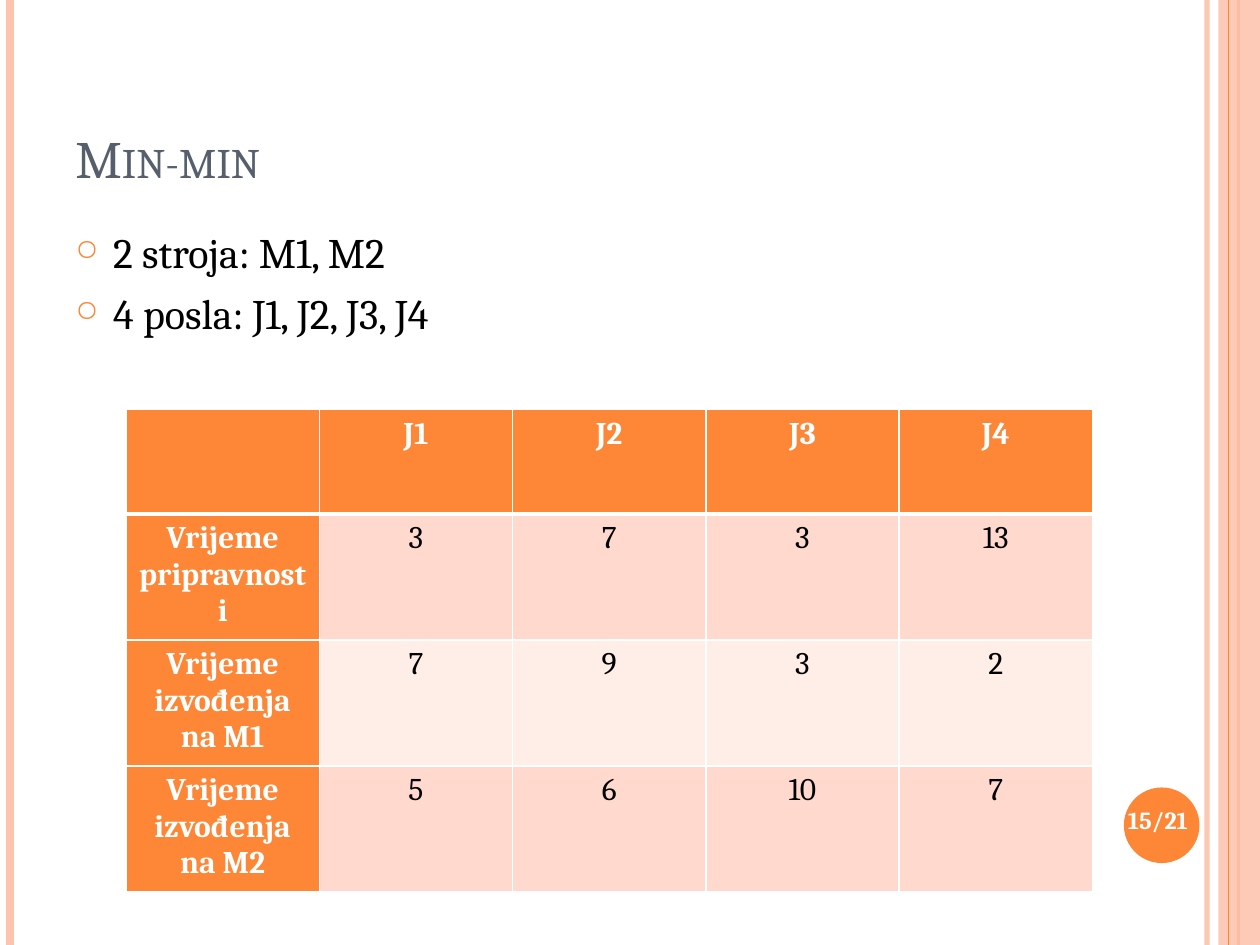
from dataclasses import dataclass

from lxml import etree
from pptx import Presentation
from pptx.dml.color import RGBColor
from pptx.enum.shapes import MSO_CONNECTOR, MSO_SHAPE
from pptx.enum.text import MSO_ANCHOR, PP_ALIGN
from pptx.oxml.ns import qn
from pptx.util import Inches, Pt

STRAIGHT = MSO_CONNECTOR.STRAIGHT
RECTANGLE, OVAL = MSO_SHAPE.RECTANGLE, MSO_SHAPE.OVAL
TOP, MIDDLE, BOTTOM = MSO_ANCHOR.TOP, MSO_ANCHOR.MIDDLE, MSO_ANCHOR.BOTTOM
CENTER = PP_ALIGN.CENTER
FONT = "Cambria"
WIDTH, HEIGHT = 10, 7.5
COLORS = {
    "accent": "FE8637",
    "peach": "FEC3AE",
    "title": "575F6D",
    "text": "000000",
    "white": "FFFFFF",
    "odd_row": "FFD9CE",
    "even_row": "FFEDE8",
}


@dataclass
class Stripe:
    x: float
    color: str
    weight: float
    alpha: int = 100


@dataclass
class Box:
    left: float
    top: float
    width: float
    height: float


BACK_STRIPES = [
    Stripe(9.58, "peach", 3, 93),
    Stripe(0.08, "peach", 4.5),
    Stripe(9.83, "accent", 1.5),
]
FRONT_STRIPE = Stripe(9.75, "accent", 0.75)
BULLETS = ["2 stroja: M1, M2", "4 posla: J1, J2, J3, J4"]
SCHEDULE = [
    ["", "J1", "J2", "J3", "J4"],
    ["Vrijeme pripravnosti", "3", "7", "3", "13"],
    ["Vrijeme izvođenja na M1", "7", "9", "3", "2"],
    ["Vrijeme izvođenja na M2", "5", "6", "10", "7"],
]


def rgb(color: str) -> RGBColor:
    """Look up a named colour."""
    return RGBColor.from_string(COLORS[color])


def add_alpha(element, alpha: int) -> None:
    """Make the solid colour inside an element partly transparent."""
    if alpha < 100:
        color = next(element.iter(qn("a:srgbClr")))
        etree.SubElement(color, qn("a:alpha"), val=str(alpha * 1000))


def add_stripe(slide, stripe: Stripe) -> None:
    """Draw a vertical line over the full slide height."""
    x = Inches(stripe.x)
    line = slide.shapes.add_connector(STRAIGHT, x, 0, x, Inches(HEIGHT))
    line.line.color.rgb = rgb(stripe.color)
    line.line.width = Pt(stripe.weight)
    properties = line._element.spPr
    add_alpha(properties, stripe.alpha)
    etree.SubElement(properties, qn("a:effectLst"))


def place(box: Box) -> list:
    """Convert a box to lengths."""
    return [Inches(v) for v in (box.left, box.top, box.width, box.height)]


def add_panel(slide, kind, box: Box, color: str, alpha: int = 100) -> None:
    """Draw a filled shape without outline."""
    panel = slide.shapes.add_shape(kind, *place(box))
    panel.shadow.inherit = False
    panel.fill.solid()
    panel.fill.fore_color.rgb = rgb(color)
    panel.line.fill.background()
    add_alpha(panel._element.spPr, alpha)


def add_text_frame(slide, box: Box, anchor):
    """Add a wrapping text box and return its text frame."""
    frame = slide.shapes.add_textbox(*place(box)).text_frame
    frame.word_wrap = True
    frame.vertical_anchor = anchor
    return frame


def add_run(paragraph, text: str, size: float, color: str, bold: bool = False):
    """Append a styled run to a paragraph."""
    run = paragraph.add_run()
    run.text = text
    run.font.name = FONT
    run.font.size = Pt(size)
    run.font.bold = bold
    run.font.color.rgb = rgb(color)
    return run


def add_bullet(paragraph) -> None:
    """Give a paragraph a hanging accent-coloured ring bullet."""
    paragraph.space_before = Pt(6)
    properties = paragraph._p.get_or_add_pPr()
    properties.set("marL", str(Inches(0.3)))
    properties.set("indent", str(Inches(-0.3)))
    color = etree.SubElement(properties, qn("a:buClr"))
    etree.SubElement(color, qn("a:srgbClr"), val=COLORS["accent"])
    etree.SubElement(properties, qn("a:buSzPct"), val="70000")
    etree.SubElement(properties, qn("a:buChar"), char="○")


def add_border(cell, side: str, weight: float) -> None:
    """Append a white border to an unfilled cell."""
    properties = cell._tc.get_or_add_tcPr()
    line = etree.SubElement(properties, qn(f"a:ln{side}"), w=str(Pt(weight)))
    fill = etree.SubElement(line, qn("a:solidFill"))
    etree.SubElement(fill, qn("a:srgbClr"), val=COLORS["white"])


def add_schedule(slide, box: Box, row_height: float) -> None:
    """Draw the table of job times."""
    row_count, column_count = len(SCHEDULE), len(SCHEDULE[0])
    frame = slide.shapes.add_table(row_count, column_count, *place(box))
    table = frame.table
    for column in table.columns:
        column.width = Inches(box.width / column_count)
    for r, values in enumerate(SCHEDULE):
        table.rows[r].height = Inches(row_height)
        for c, value in enumerate(values):
            cell = table.cell(r, c)
            heading = r == 0 or c == 0
            weights = {"L": 1, "R": 1, "T": 3 if r == 1 else 1, "B": 3 if r == 0 else 1}
            for side, weight in weights.items():
                add_border(cell, side, weight)
            cell.fill.solid()
            band = "odd_row" if r % 2 else "even_row"
            cell.fill.fore_color.rgb = rgb("accent" if heading else band)
            if value:
                paragraph = cell.text_frame.paragraphs[0]
                paragraph.alignment = CENTER
                add_run(paragraph, value, 18, "white" if heading else "text", heading)


def main() -> None:
    """Build the slide and save it."""
    deck = Presentation()
    deck.slide_width, deck.slide_height = Inches(WIDTH), Inches(HEIGHT)
    slide = deck.slides.add_slide(deck.slide_layouts[6])

    for stripe in BACK_STRIPES:
        add_stripe(slide, stripe)
    add_panel(slide, RECTANGLE, Box(9.67, 0, 0.33, HEIGHT), "peach", 87)
    add_stripe(slide, FRONT_STRIPE)
    add_panel(slide, OVAL, Box(8.92, 6.25, 0.6, 0.6), "accent")

    title = add_text_frame(slide, Box(0.5, 0.3, 8.17, 1.25), BOTTOM)
    heading = add_run(title.paragraphs[0], "Min-min", 30, "title")
    heading.font._element.set("cap", "small")

    body = add_text_frame(slide, Box(0.5, 1.75, 8.17, 5.33), TOP)
    for i, bullet in enumerate(BULLETS):
        paragraph = body.add_paragraph() if i else body.paragraphs[0]
        add_bullet(paragraph)
        add_run(paragraph, bullet, 24, "text")

    add_schedule(slide, Box(1, 3.25, 7.67, 3.83), 0.83)

    page = add_text_frame(slide, Box(8.83, 6.17, 0.72, 0.67), MIDDLE).paragraphs[0]
    page.alignment = CENTER
    add_run(page, "15/21", 14, "white", True)
    deck.save("out.pptx")


if __name__ == "__main__":
    main()
